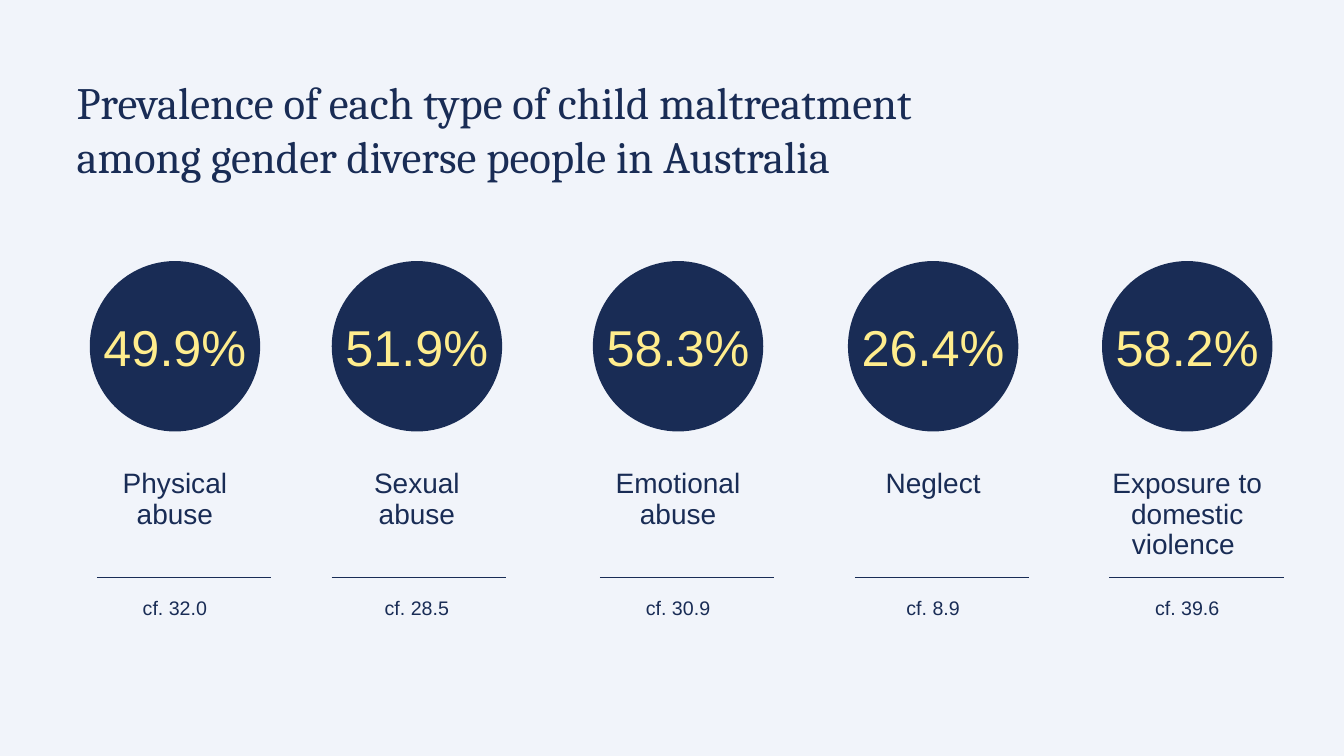
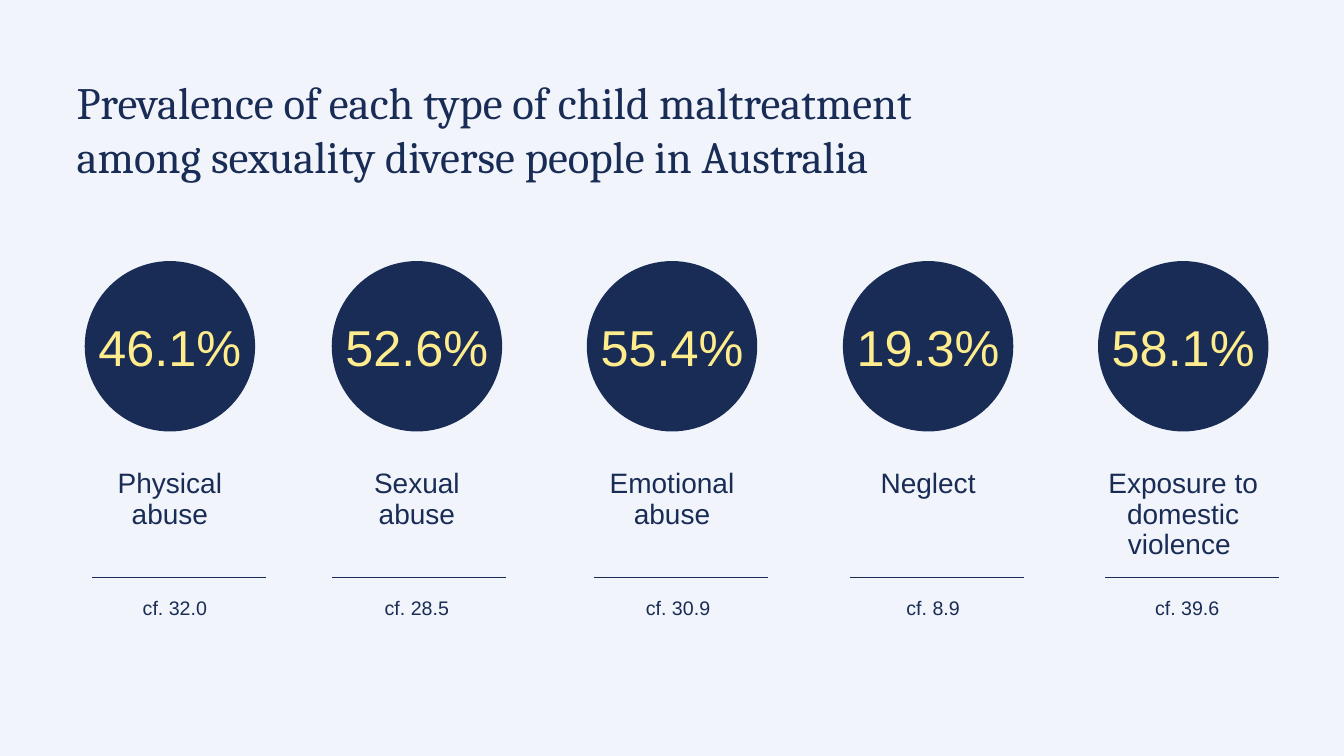
from collections import namedtuple
from dataclasses import dataclass

from lxml.etree import SubElement
from pptx import Presentation
from pptx.dml.color import RGBColor
from pptx.enum.shapes import MSO_CONNECTOR, MSO_SHAPE
from pptx.enum.text import MSO_ANCHOR, MSO_AUTO_SIZE, PP_ALIGN
from pptx.oxml.ns import qn
from pptx.util import Pt

EMU_PER_PX = 9144  # 100 px to the inch

Box = namedtuple("Box", "left top width height")
Abuse = namedtuple("Abuse", "label comparison rule_inset")


@dataclass(frozen=True)
class Theme:
    background: RGBColor = RGBColor(0xF1, 0xF4, 0xFA)
    navy: RGBColor = RGBColor(0x19, 0x2C, 0x55)
    yellow: RGBColor = RGBColor(0xFF, 0xED, 0x8D)
    title_font: str = "Cambria"
    body_font: str = "Arial"
    title_size: int = 32
    figure_size: int = 36
    label_size: int = 20
    comparison_size: int = 14
    rule_width: float = 0.5


THEME = Theme()

TITLE_BOX = Box(76, 74, 940, 85)
COLUMN_TOP = 259
COLUMN_WIDTH = 191
CIRCLE_SIZE = 169
LABEL_OFFSET = 207
RULE_OFFSET = 314
RULE_LENGTH = 173
COMPARISON_TOP = 594
TEXT_HEIGHT = 57
COMPARISON_LEFTS = (78, 318, 577, 830, 1082)

ABUSES = (
    Abuse("Physical\nabuse", "cf. 32.0", 18),
    Abuse("Sexual\nabuse", "cf. 28.5", 11),
    Abuse("Emotional\nabuse", "cf. 30.9", 18),
    Abuse("Neglect", "cf. 8.9", 18),
    Abuse("Exposure to domestic violence ", "cf. 39.6", 18),
)

SLIDES = (
    (
        "Prevalence of each type of child maltreatment among gender diverse people in Australia",
        ("49.9%", "51.9%", "58.3%", "26.4%", "58.2%"),
        COMPARISON_LEFTS,
    ),
    (
        "Prevalence of each type of child maltreatment among sexuality diverse people in Australia",
        ("46.1%", "52.6%", "55.4%", "19.3%", "58.1%"),
        (73, 318, 571, 825, 1078),
    ),
)


def px(*lengths):
    return [length * EMU_PER_PX for length in lengths]


def write(text_frame, text, font_name, size, color, alignment):
    paragraph = text_frame.paragraphs[0]
    paragraph.text = text
    paragraph.alignment = alignment
    for run in paragraph.runs:
        run.font.name = font_name
        run.font.size = Pt(size)
        run.font.color.rgb = color
    return paragraph


def clear_margins(text_frame):
    text_frame.margin_left = text_frame.margin_right = 0
    text_frame.margin_top = text_frame.margin_bottom = 0
    text_frame.word_wrap = True
    text_frame.auto_size = MSO_AUTO_SIZE.NONE
    text_frame.vertical_anchor = MSO_ANCHOR.TOP


def add_title(slide, text, box):
    title = slide.shapes.title
    title.left, title.top, title.width, title.height = px(*box)
    clear_margins(title.text_frame)
    write(title.text_frame, text, THEME.title_font, THEME.title_size,
          THEME.navy, PP_ALIGN.LEFT)


def add_caption(shapes, text, size, box):
    caption = shapes.add_textbox(*px(*box))
    clear_margins(caption.text_frame)
    paragraph = write(caption.text_frame, text, THEME.body_font, size,
                      THEME.navy, PP_ALIGN.CENTER)
    paragraph.line_spacing = 0.9


def add_circle(shapes, figure, box):
    circle = shapes.add_shape(MSO_SHAPE.OVAL, *px(*box))
    circle.shadow.inherit = False
    circle.fill.solid()
    circle.fill.fore_color.rgb = THEME.navy
    circle.line.fill.background()
    circle.text_frame.word_wrap = False
    circle.text_frame.vertical_anchor = MSO_ANCHOR.MIDDLE
    write(circle.text_frame, figure, THEME.body_font, THEME.figure_size,
          THEME.yellow, PP_ALIGN.CENTER)


def add_rule(shapes, left, top, length):
    rule = shapes.add_connector(MSO_CONNECTOR.STRAIGHT, *px(left, top, left + length, top))
    rule.line.color.rgb = THEME.navy
    rule.line.width = Pt(THEME.rule_width)
    SubElement(rule._element.spPr, qn("a:effectLst"))


def add_column(slide, abuse, figure, left, top):
    """Group the label, circle and rule of one type of abuse."""
    shapes = slide.shapes.add_group_shape().shapes
    add_caption(shapes, abuse.label, THEME.label_size,
                Box(left, top + LABEL_OFFSET, COLUMN_WIDTH, TEXT_HEIGHT))
    circle_left = left + (COLUMN_WIDTH - CIRCLE_SIZE) // 2
    add_circle(shapes, figure, Box(circle_left, top, CIRCLE_SIZE, CIRCLE_SIZE))
    add_rule(shapes, left + abuse.rule_inset, top + RULE_OFFSET, RULE_LENGTH)


def add_prevalence_slide(presentation, title, figures, column_lefts):
    slide = presentation.slides.add_slide(presentation.slide_layouts.get_by_name("Title Only"))
    add_title(slide, title, TITLE_BOX)
    for abuse, figure, left in zip(ABUSES, figures, column_lefts):
        add_column(slide, abuse, figure, left, COLUMN_TOP)
    for abuse, left in zip(ABUSES, COMPARISON_LEFTS):
        add_caption(slide.shapes, abuse.comparison, THEME.comparison_size,
                    Box(left, COMPARISON_TOP, COLUMN_WIDTH, TEXT_HEIGHT))


def main():
    presentation = Presentation()
    presentation.slide_width, presentation.slide_height = px(1333, 750)
    background = presentation.slide_master.background.fill
    background.solid()
    background.fore_color.rgb = THEME.background
    for title, figures, column_lefts in SLIDES:
        add_prevalence_slide(presentation, title, figures, column_lefts)
    presentation.save("out.pptx")


if __name__ == "__main__":
    main()
